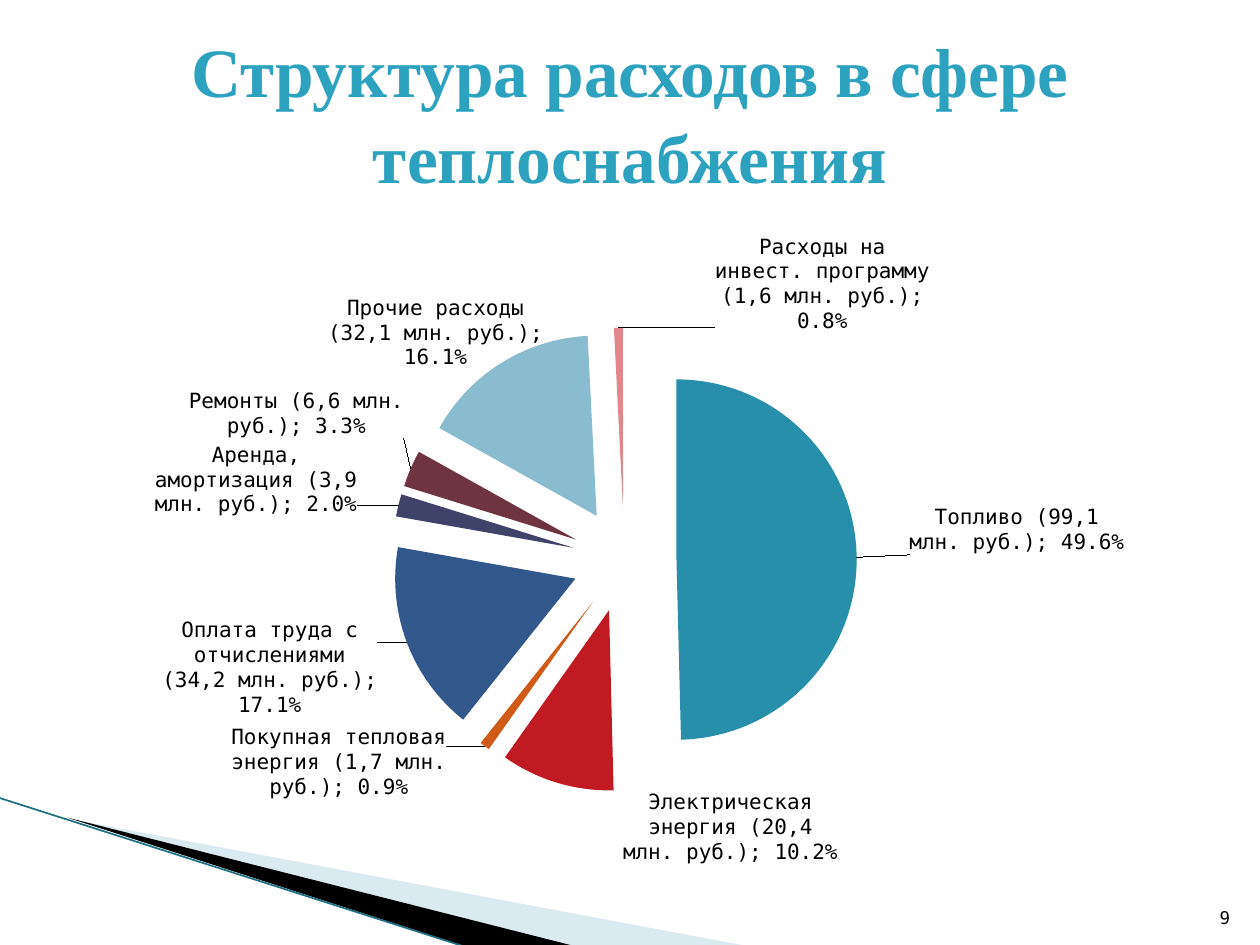
import copy

import lxml.etree
import pptx
import pptx.chart.data
import pptx.dml.color
import pptx.enum.chart
import pptx.enum.shapes
import pptx.enum.text
import pptx.oxml
import pptx.oxml.ns
import pptx.util

Cm = pptx.util.Cm
Pt = pptx.util.Pt
qn = pptx.oxml.ns.qn
ALIGN = pptx.enum.text.PP_ALIGN
ANCHOR = pptx.enum.text.MSO_ANCHOR

MONO = "DejaVu Sans Mono"
COSTS = [
    ("Топливо (99,1 млн. руб.)", 0.496, "288FAB", 0.04, -0.04),
    ("Электрическая энергия (20,4 млн. руб.)", 0.102, "C01B22", 0.25, 0),
    ("Покупная тепловая энергия (1,7 млн. руб.)", 0.009, "D05A18", -0.03, -0.04),
    ("Оплата труда с отчислениями (34,2 млн. руб.)", 0.171, "32588B", -0.02, -0.04),
    ("Аренда, амортизация (3,9 млн. руб.)", 0.02, "3F4269", -0.03, 0.02),
    ("Ремонты (6,6 млн. руб.)", 0.033, "6E3540", 0, -0.04),
    ("Прочие расходы (32,1 млн. руб.)", 0.161, "8ABCCF", 0.04, 0.02),
    ("Расходы на инвест. программу (1,6 млн. руб.)", 0.008, "E1878C", 0.18, 0.02),
]


def color(value):
    return pptx.dml.color.RGBColor.from_string(value)


def apply(target, values):
    for name, value in values.items():
        setattr(target, name, value)


def format_font(font, hex_color, **values):
    apply(font, values)
    font.color.rgb = color(hex_color)


def add_child(parent, tag, **attributes):
    child = lxml.etree.SubElement(parent, qn(tag))
    for name, value in attributes.items():
        child.set(name, str(value))
    return child


def write_text(box, text, anchor, alignment, hex_color, spacing=1.0, **font):
    frame = box.text_frame
    apply(frame, dict(word_wrap=True, vertical_anchor=anchor))
    para = frame.paragraphs[0]
    apply(para, dict(alignment=alignment, line_spacing=spacing))
    span = para.add_run()
    span.text = text
    format_font(span.font, hex_color, **font)


def add_wedge(page, points, hex_color, opacity=100):
    corners = [(Cm(x), Cm(y)) for x, y in points]
    builder = page.shapes.build_freeform(*corners[0])
    builder.add_line_segments(corners[1:], close=True)
    wedge = builder.convert_to_shape()
    wedge.shadow.inherit = False
    wedge.fill.solid()
    wedge.fill.fore_color.rgb = color(hex_color)
    wedge.line.fill.background()
    if opacity < 100:
        fill = wedge.element.spPr.find(qn("a:solidFill"))
        add_child(fill[0], "a:alpha", val=opacity * 1000)


def add_line(page, start, end, hex_color, width):
    ends = [Cm(value) for value in start + end]
    line = page.shapes.add_connector(pptx.enum.shapes.MSO_CONNECTOR.STRAIGHT, *ends)
    line.line.color.rgb = color(hex_color)
    line.line.width = Pt(width)
    add_child(line.element.spPr, "a:effectLst")


def make_layout(**values):
    layout = lxml.etree.Element(qn("c:layout"))
    manual = add_child(layout, "c:manualLayout")
    for name, value in values.items():
        add_child(manual, f"c:{name}", val=value)
    return layout


def format_labels(series):
    labels = series.data_labels
    apply(labels, dict(
        number_format="0.0%", number_format_is_linked=False,
        show_value=True, show_category_name=True, show_percentage=False,
        position=pptx.enum.chart.XL_LABEL_POSITION.OUTSIDE_END))
    format_font(labels.font, "000000", name=MONO, size=Pt(12))
    common = labels._element
    separator = lxml.etree.Element(qn("c:separator"))
    separator.text = "; "
    common.find(qn("c:showBubbleSize")).addnext(separator)
    shared = [child for child in common if child.tag != qn("c:showLeaderLines")]
    for index, (_, _, _, shift_x, shift_y) in enumerate(COSTS):
        label = lxml.etree.Element(qn("c:dLbl"))
        add_child(label, "c:idx", val=index)
        label.append(make_layout(x=shift_x, y=shift_y))
        label.extend([copy.deepcopy(child) for child in shared])
        common.insert(index, label)


def add_cost_pie(page):
    data = pptx.chart.data.CategoryChartData(number_format="0.0%")
    data.categories = [cost[0] for cost in COSTS]
    data.add_series("Series 1", [cost[1] for cost in COSTS])
    chart = page.shapes.add_chart(
        pptx.enum.chart.XL_CHART_TYPE.PIE_EXPLODED,
        Cm(1.27), Cm(4.11), Cm(22.86), Cm(13.82), data).chart
    apply(chart, dict(has_legend=False, has_title=False))
    format_font(chart.font, "000000", name=MONO, size=Pt(18))
    area = chart._chartSpace.chart.plotArea
    for old in area.findall(qn("c:layout")):
        area.remove(old)
    area.insert(0, make_layout(layoutTarget="inner", xMode="edge", yMode="edge",
                               x=0.29, y=0.18, w=0.41, h=0.68))
    plot = chart.plots[0]
    plot.vary_by_categories = True
    series = plot.series[0]
    series._element.find(qn("c:explosion")).set("val", "29")
    for index, cost in enumerate(COSTS):
        piece = series.points[index].format
        piece.fill.solid()
        piece.fill.fore_color.rgb = color(cost[2])
        piece.line.fill.background()
    format_labels(series)


def add_title(page, text):
    title = page.shapes.title
    apply(title, dict(left=Cm(1.27), top=Cm(0.74), width=Cm(22.86), height=Cm(3)))
    write_text(title, text, ANCHOR.MIDDLE, ALIGN.CENTER, "2DA2BF", 1.04,
               name="Times New Roman", size=Pt(39.6), bold=True)


def add_page_number(page, number):
    box = page.shapes.add_textbox(Cm(24.03), Cm(17.81), Cm(1.02), Cm(1.02))
    apply(box.text_frame, dict(margin_left=0, margin_right=Cm(0.25)))
    write_text(box, number, ANCHOR.BOTTOM, ALIGN.RIGHT, "000000",
               name=MONO, size=Pt(10))


def main():
    deck = pptx.Presentation()
    apply(deck, dict(slide_width=Cm(25.4), slide_height=Cm(19.05)))
    page = deck.slides.add_slide(deck.slide_layouts[5])
    add_wedge(page, [(1.4, 16.51), (15.11, 19.08), (11.58, 19.08)], "A0CBDC", 40)
    add_wedge(page, [(1.35, 16.48), (11.61, 19.08), (9.45, 19.1)], "000000")
    add_line(page, (-0.03, 16.08), (9.42, 19.1), "1B6F82", 0.95)
    add_cost_pie(page)
    add_title(page, "Структура расходов в сфере теплоснабжения")
    add_page_number(page, "9")
    deck.save("out.pptx")


if __name__ == "__main__":
    main()
